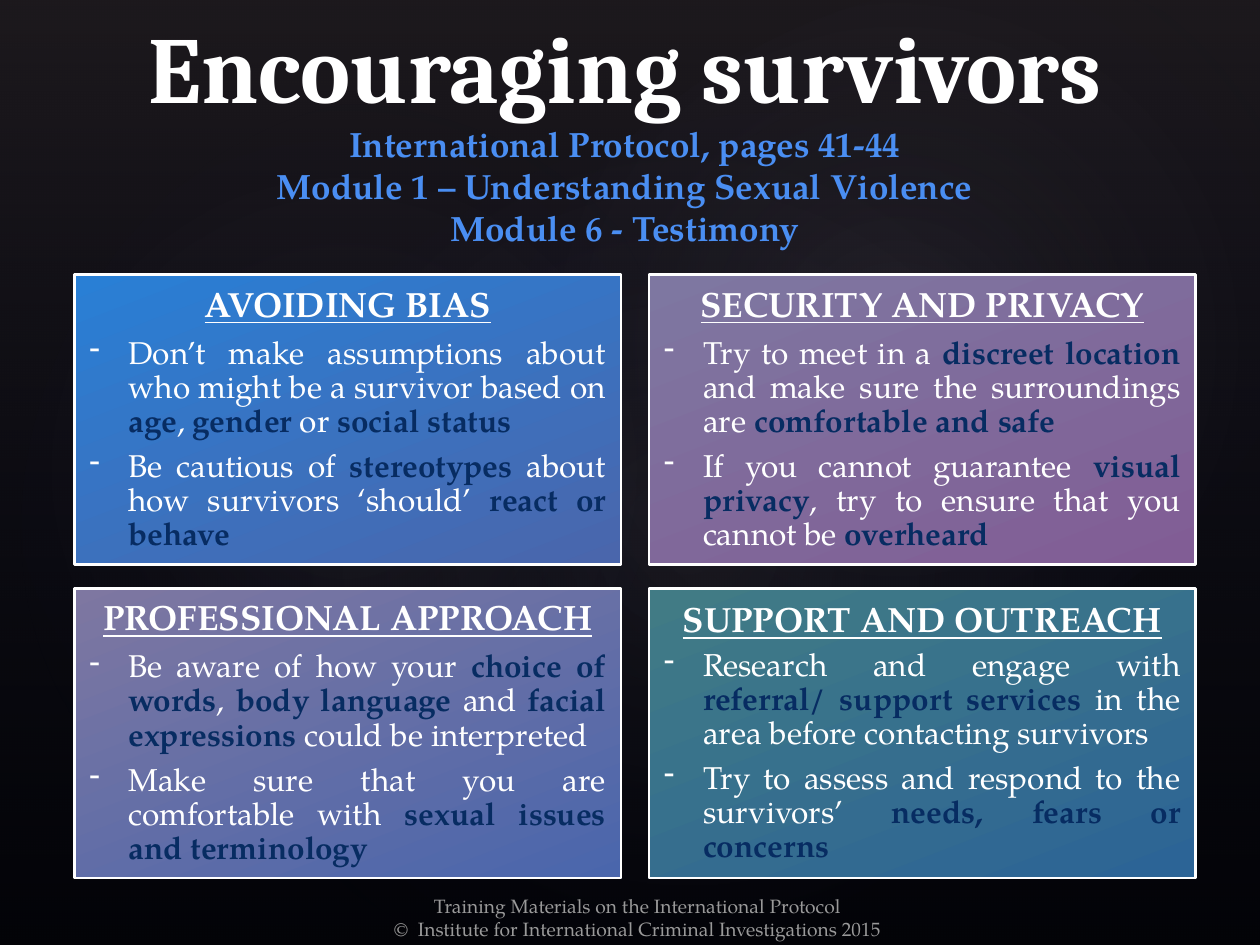
from lxml import etree
from pptx import Presentation
from pptx.dml.color import RGBColor
from pptx.enum.shapes import MSO_SHAPE
from pptx.enum.text import MSO_ANCHOR, MSO_AUTO_SIZE, PP_ALIGN
from pptx.oxml import parse_xml
from pptx.oxml.ns import qn
from pptx.util import Inches, Pt

RECTANGLE, OVAL = MSO_SHAPE.RECTANGLE, MSO_SHAPE.OVAL
CENTER, JUSTIFY = PP_ALIGN.CENTER, PP_ALIGN.JUSTIFY
TITLE_FONT, BODY_FONT = "Cambria", "TeX Gyre Pagella"
WHITE, NAVY, BLUE, GREY = "FFFFFF", "072C62", "4A8EF2", "999999"
DRAWING_NS = "http://schemas.openxmlformats.org/drawingml/2006/main"

TITLE = "Encouraging survivors"
SUBTITLES = [
    "International Protocol, pages 41-44",
    "Module 1 – Understanding Sexual Violence",
    "Module 6 - Testimony",
]
FOOTER = [
    "Training Materials on the International Protocol",
    "©  Institute for International Criminal Investigations 2015",
]
# heading, start colour, end colour, space after heading, points (*bold navy*)
CARDS = [
    ("AVOIDING BIAS", "297FD5", "4A66AC", 7, [
        "Don’t make assumptions about who might be a survivor based on "
        "*age*, *gender* or *social status*",
        "Be cautious of *stereotypes* about how survivors ‘should’ *react or behave*",
    ]),
    ("SECURITY AND PRIVACY", "7E77A1", "815D95", 7, [
        "Try to meet in a *discreet location* and make sure the surroundings "
        "are *comfortable and safe*",
        "If you cannot guarantee *visual privacy*, try to ensure that you "
        "cannot be *overheard*",
    ]),
    ("PROFESSIONAL APPROACH", "7E77A1", "4A66AC", 7, [
        "Be aware of how your *choice of words*, *body language* and "
        "*facial expressions* could be interpreted",
        "Make sure that you are comfortable with *sexual issues and terminology*",
    ]),
    ("SUPPORT AND OUTREACH", "417B85", "2C6496", 4.8, [
        "Research and engage with *referral/ support services* in the area "
        "before contacting survivors",
        "Try to assess and respond to the survivors’ *needs, fears or concerns*",
    ]),
]
# left, top, width, height, rotation, centre opacity in percent
GLOWS = [
    (1.5, 1.14, 7.92, 6.24, 328.7, 7),
    (-0.3, 1.28, 6.06, 4.9, 294.3, 8),
    (3.58, 0.13, 7.09, 5.2, 328.7, 8),
]
CARD_LEFT, CARD_TOP, CARD_WIDTH, CARD_HEIGHT = 0.59, 2.18, 4.34, 2.3
COLUMN_STEP, ROW_STEP = 4.56, 2.49


def style(span, size, color, bold=False, font=BODY_FONT):
    span.font.size = Pt(size)
    span.font.name = font
    span.font.bold = bold
    span.font.color.rgb = RGBColor.from_string(color)


def fill_gradient(shape, stops, angle=None):
    """Fill with (position, colour, opacity) stops; radial when angle is None."""
    stop_xml = "".join(
        f'<a:gs pos="{position * 1000}"><a:srgbClr val="{color}">'
        f'<a:alpha val="{opacity * 1000}"/></a:srgbClr></a:gs>'
        for position, color, opacity in stops)
    if angle is None:
        direction = ('<a:path path="circle"><a:fillToRect l="50000" t="50000" '
                     'r="50000" b="50000"/></a:path>')
    else:
        direction = f'<a:lin ang="{angle * 60000}" scaled="0"/>'
    gradient = parse_xml(f'<a:gradFill xmlns:a="{DRAWING_NS}" rotWithShape="1">'
                         f'<a:gsLst>{stop_xml}</a:gsLst>{direction}</a:gradFill>')
    shape.element.spPr.find(qn("a:prstGeom")).addnext(gradient)


def add_panel(page, kind, left, top, width, height, stops, angle=None):
    panel = page.shapes.add_shape(
        kind, Inches(left), Inches(top), Inches(width), Inches(height))
    panel.shadow.inherit = False
    fill_gradient(panel, stops, angle)
    return panel


def add_backdrop(page):
    page.background.fill.solid()
    page.background.fill.fore_color.rgb = RGBColor.from_string("000000")
    layers = [add_panel(page, RECTANGLE, 0, 0, 10, 7.5,
                        [(0, "504652", 36), (100, "242852", 10)], 90)]
    for *place, rotation, opacity in GLOWS:
        glow = add_panel(page, OVAL, *place,
                         [(0, "C4BCC6", opacity), (58, "242852", 0), (100, "242852", 0)])
        glow.rotation = rotation
        layers.append(glow)
    for layer in layers:
        layer.line.fill.background()
        page.shapes.title.element.addprevious(layer.element)


def add_title(page):
    title = page.shapes.title
    title.left, title.top = Inches(0.51), Inches(0.13)
    title.width, title.height = Inches(8.9), Inches(1.89)
    frame = title.text_frame
    frame.text = "\v".join([TITLE] + SUBTITLES)
    frame.auto_size = MSO_AUTO_SIZE.NONE
    frame.vertical_anchor = MSO_ANCHOR.BOTTOM
    para = frame.paragraphs[0]
    para.alignment = CENTER
    para.runs[0].text = TITLE
    style(para.runs[0], 54, WHITE, True, TITLE_FONT)
    for span in para.runs[1:]:
        style(span, 20, BLUE, True)
    for line_break in title.element.iter(qn("a:br")):
        etree.SubElement(line_break, qn("a:rPr")).set("sz", "2000")


def add_footer(page):
    box = page.shapes.add_textbox(Inches(2.56), Inches(7.05), Inches(5), Inches(0.4))
    box.text_frame.word_wrap = True
    box.text_frame.text = "\n".join(FOOTER)
    for para in box.text_frame.paragraphs:
        para.alignment = CENTER
        style(para.runs[0], 11, GREY)


def add_point(frame, text):
    para = frame.add_paragraph()
    para.alignment, para.line_spacing, para.space_after = JUSTIFY, 0.9, Pt(6.3)
    properties = para._p.get_or_add_pPr()
    properties.set("marL", str(Inches(0.31)))
    properties.set("indent", str(-Inches(0.31)))
    etree.SubElement(properties, qn("a:buChar")).set("char", "-")
    for index, part in enumerate(text.split("*")):
        if part:
            span = para.add_run()
            span.text = part
            emphasised = index % 2 == 1
            style(span, 18, NAVY if emphasised else WHITE, emphasised)


def add_card(page, index, heading, start, end, heading_gap, points):
    row, column = divmod(index, 2)
    card = add_panel(page, RECTANGLE, CARD_LEFT + column * COLUMN_STEP,
                     CARD_TOP + row * ROW_STEP, CARD_WIDTH, CARD_HEIGHT,
                     [(0, start, 100), (100, end, 100)], 69)
    card.line.color.rgb = RGBColor.from_string(WHITE)
    card.line.width = Pt(1.5)
    frame = card.text_frame
    frame.word_wrap = True
    frame.vertical_anchor = MSO_ANCHOR.MIDDLE
    frame.margin_left = frame.margin_right = Inches(0.12)
    frame.margin_top = frame.margin_bottom = Inches(0.05)
    frame.text = heading
    para = frame.paragraphs[0]
    para.alignment, para.line_spacing, para.space_after = CENTER, 0.9, Pt(heading_gap)
    style(para.runs[0], 20, WHITE, True)
    para.runs[0].font.underline = True
    for point in points:
        add_point(frame, point)


def main():
    deck = Presentation()
    deck.slide_width, deck.slide_height = Inches(10), Inches(7.5)
    page = deck.slides.add_slide(deck.slide_layouts[5])
    add_backdrop(page)
    add_title(page)
    add_footer(page)
    for index, card in enumerate(CARDS):
        add_card(page, index, *card)
    deck.save("out.pptx")


if __name__ == "__main__":
    main()
